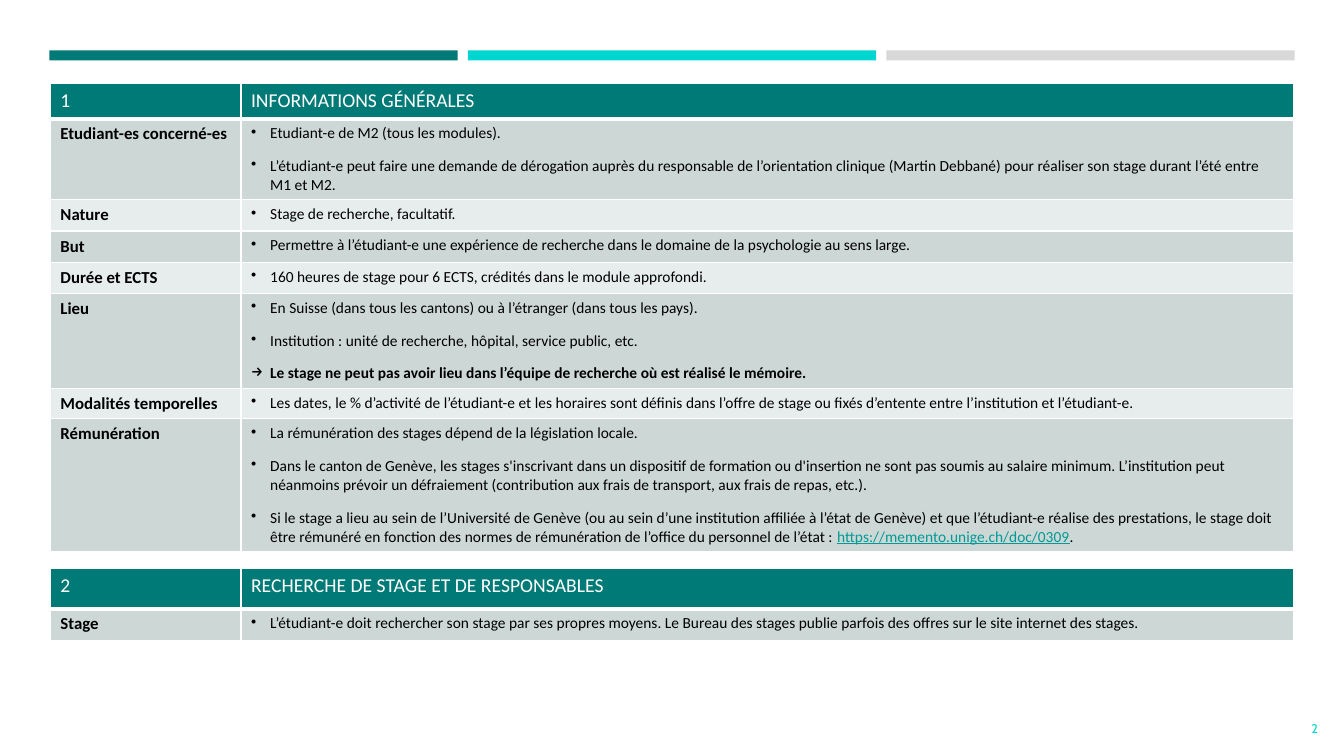
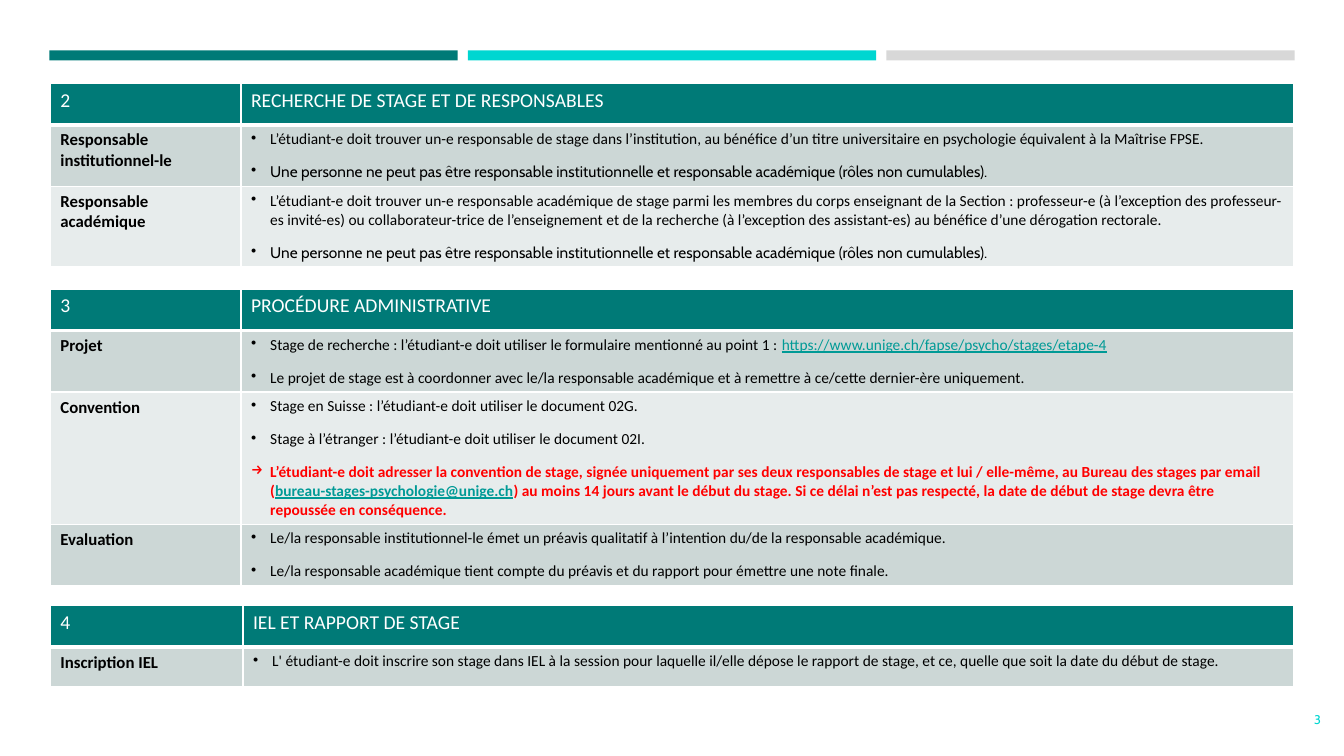
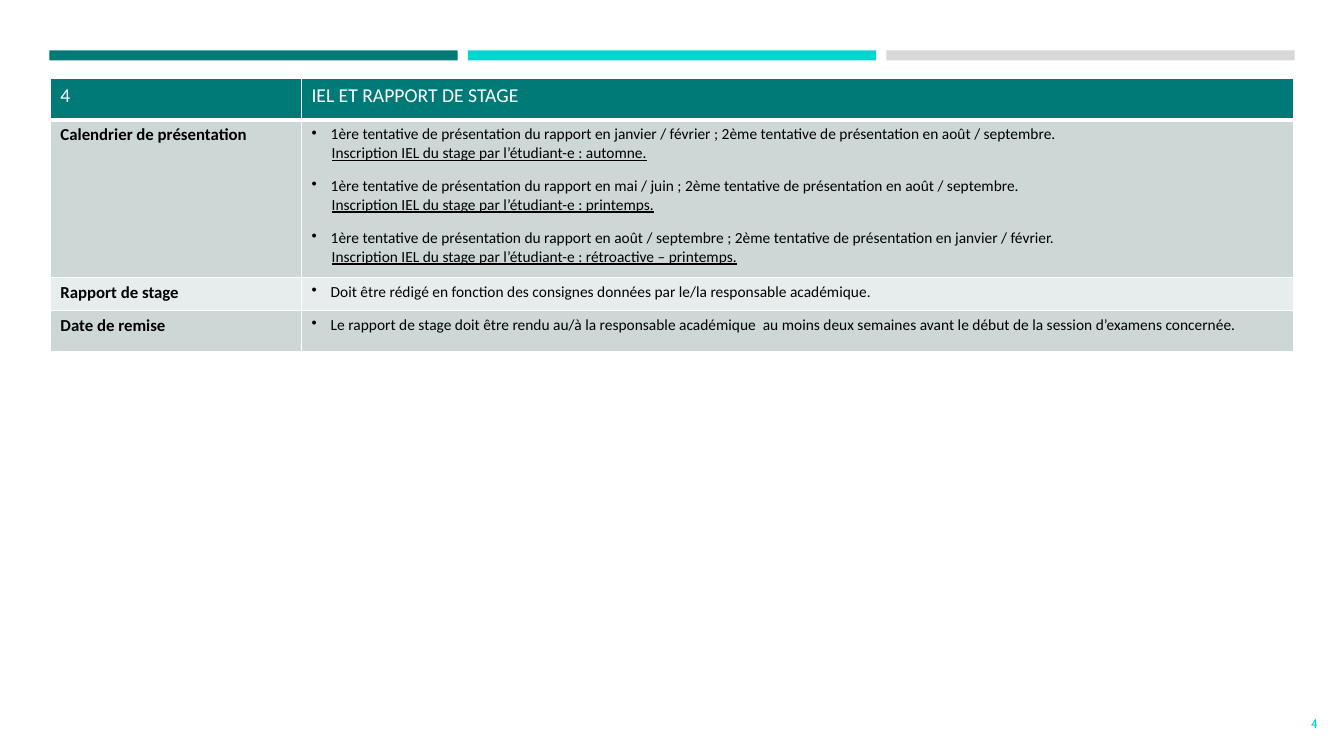
from lxml.etree import SubElement
from pptx import Presentation
from pptx.dml.color import RGBColor
from pptx.enum.shapes import MSO_SHAPE
from pptx.enum.text import MSO_ANCHOR, PP_ALIGN
from pptx.oxml.ns import qn
from pptx.util import Pt

PX = 9144  # one px is a hundredth of an inch
TEAL, CYAN, GREY = "007A77", "00D6D1", "D8D8D8"
WHITE, BLACK, RED, LINK = "FFFFFF", "000000", "FF0000", "009A96"
BANDS = ["CCD7D6", "E7ECEC"]
TABLE_LEFT, TABLE_WIDTH, INDENT = 50, 1233, 19

# First character of a line: (bullet, font, colour, bold)
MARKS = {
    "•": ("•", "Calibri", BLACK, False),
    "◦": ("•", "Cabin", BLACK, False),
    "→": ("→", "Calibri", BLACK, True),
    "!": ("→", "Calibri", RED, True),
    "_": (None, "Calibri", BLACK, False),
}


def color(value):
    return RGBColor.from_string(value)


def style_cell(cell, fill, bottom_width):
    cell.fill.solid()
    cell.fill.fore_color.rgb = color(fill)
    properties = cell._tc.get_or_add_tcPr()
    for index, side in enumerate(("lnL", "lnR", "lnT", "lnB")):
        width = bottom_width if side == "lnB" else 1
        line = properties.makeelement(qn("a:" + side), {"w": str(Pt(width))})
        solid = SubElement(line, qn("a:solidFill"))
        SubElement(solid, qn("a:srgbClr"), val=WHITE)
        properties.insert(index, line)


# Each table: top, label column width, header height, number, title,
# rows of (height, label, lines); text between bars is a link
not_both = ("◦ Une personne ne peut pas être responsable institutionnelle et "
            "responsable académique (rôles non cumulables).")
search_title = "RECHERCHE DE STAGE ET DE RESPONSABLES"
report_title = "IEL ET RAPPORT DE STAGE"

general = (83, 189, 35, "1", "INFORMATIONS GÉNÉRALES", [
    (80, "Etudiant-es concerné-es", [
        "• Etudiant-e de M2 (tous les modules).",
        "• L’étudiant-e peut faire une demande de dérogation auprès du responsable de "
        "l’orientation clinique (Martin Debbané) pour réaliser son stage durant l’été "
        "entre M1 et M2."]),
    (31, "Nature", ["• Stage de recherche, facultatif."]),
    (31, "But", [
        "• Permettre à l’étudiant-e une expérience de recherche dans le domaine de la "
        "psychologie au sens large."]),
    (31, "Durée et ECTS", [
        "• 160 heures de stage pour 6 ECTS, crédités dans le module approfondi."]),
    (94, "Lieu", [
        "• En Suisse (dans tous les cantons) ou à l’étranger (dans tous les pays).",
        "• Institution : unité de recherche, hôpital, service public, etc.",
        "→ Le stage ne peut pas avoir lieu dans l’équipe de recherche où est réalisé "
        "le mémoire."]),
    (30, "Modalités temporelles", [
        "• Les dates, le % d’activité de l’étudiant-e et les horaires sont définis dans "
        "l’offre de stage ou fixés d’entente entre l’institution et l’étudiant-e."]),
    (131, "Rémunération", [
        "• La rémunération des stages dépend de la législation locale.",
        "• Dans le canton de Genève, les stages s'inscrivant dans un dispositif de "
        "formation ou d'insertion ne sont pas soumis au salaire minimum. L’institution "
        "peut néanmoins prévoir un défraiement (contribution aux frais de transport, "
        "aux frais de repas, etc.).",
        "• Si le stage a lieu au sein de l’Université de Genève (ou au sein d’une "
        "institution affiliée à l’état de Genève) et que l’étudiant-e réalise des "
        "prestations, le stage doit être rémunéré en fonction des normes de rémunération "
        "de l’office du personnel de l’état : |https://memento.unige.ch/doc/0309|."]),
])
search = (564, 189, 40, "2", search_title, [
    (32, "Stage", [
        "• L’étudiant-e doit rechercher son stage par ses propres moyens. Le Bureau des "
        "stages publie parfois des offres sur le site internet des stages."]),
])
supervisors = (83, 189, 41, "2", search_title, [
    (61, "Responsable institutionnel-le", [
        "• L’étudiant-e doit trouver un-e responsable de stage dans l’institution, au "
        "bénéfice d’un titre universitaire en psychologie équivalent à la Maîtrise FPSE.",
        not_both]),
    (80, "Responsable académique", [
        "• L’étudiant-e doit trouver un-e responsable académique de stage parmi les "
        "membres du corps enseignant de la Section : professeur-e (à l’exception des "
        "professeur-es invité-es) ou collaborateur-trice de l’enseignement et de la "
        "recherche (à l’exception des assistant-es) au bénéfice d’une dérogation "
        "rectorale.",
        not_both]),
])
procedure = (287, 189, 41, "3", "PROCÉDURE ADMINISTRATIVE", [
    (61, "Projet", [
        "• Stage de recherche : l’étudiant-e doit utiliser le formulaire mentionné au "
        "point 1 : |https://www.unige.ch/fapse/psycho/stages/etape-4|",
        "• Le projet de stage est à coordonner avec le/la responsable académique et à "
        "remettre à ce/cette dernier-ère uniquement."]),
    (131, "Convention", [
        "• Stage en Suisse : l’étudiant-e doit utiliser le document 02G.",
        "• Stage à l’étranger : l’étudiant-e doit utiliser le document 02I.",
        "! L’étudiant-e doit adresser la convention de stage, signée uniquement par ses "
        "deux responsables de stage et lui / elle-même, au Bureau des stages par email "
        "(|bureau-stages-psychologie@unige.ch|) au moins 14 jours avant le début du "
        "stage. Si ce délai n’est pas respecté, la date de début de stage devra être "
        "repoussée en conséquence."]),
    (61, "Evaluation", [
        "• Le/la responsable institutionnel-le émet un préavis qualitatif à l’intention "
        "du/de la responsable académique.",
        "• Le/la responsable académique tient compte du préavis et du rapport pour "
        "émettre une note finale."]),
])
registration = (601, 191, 41, "4", report_title, [
    (39, "Inscription IEL", [
        "• L' étudiant-e doit inscrire son stage dans IEL à la session pour laquelle "
        "il/elle dépose le rapport de stage, et ce, quelle que soit la date du début de "
        "stage."]),
])
calendar = (78, 249, 41, "4", report_title, [
    (156, "Calendrier de présentation", [
        "• 1ère tentative de présentation du rapport en janvier / février ; 2ème "
        "tentative de présentation en août / septembre.",
        "_ Inscription IEL du stage par l’étudiant-e : automne.",
        "• 1ère tentative de présentation du rapport en mai / juin ; 2ème tentative de "
        "présentation en août / septembre.",
        "_ Inscription IEL du stage par l’étudiant-e : printemps.",
        "• 1ère tentative de présentation du rapport en août / septembre ; 2ème "
        "tentative de présentation en janvier / février.",
        "_ Inscription IEL du stage par l’étudiant-e : rétroactive – printemps."]),
    (33, "Rapport de stage", [
        "• Doit être rédigé en fonction des consignes données par le/la responsable "
        "académique."]),
    (41, "Date de remise", [
        "• Le rapport de stage doit être rendu au/à la responsable académique  au moins "
        "deux semaines avant le début de la session d’examens concernée."]),
])

# Each page: number, left and top of the number, tables
pages = [
    (2, 1202, 703, [general, search]),
    (3, 1205, 694, [supervisors, procedure, registration]),
    (4, 1202, 698, [calendar]),
]

deck = Presentation()
deck.slide_width, deck.slide_height = 1333 * PX, 750 * PX
layout = deck.slide_layouts[6]

for number, number_left, number_top, tables in pages:
    page = deck.slides.add_slide(layout)

    # Bands, drawn once and kept on the shared layout
    if number == pages[0][0]:
        for index, fill in enumerate((TEAL, CYAN, GREY)):
            band = page.shapes.add_shape(MSO_SHAPE.RECTANGLE, (49 + 415 * index) * PX,
                                         50 * PX, 405 * PX, 10 * PX)
            band.shadow.inherit = False
            band.fill.solid()
            band.fill.fore_color.rgb = color(fill)
            band.line.fill.background()
            layout.shapes._spTree.append(band._element)

    for top, label_width, header_height, section, title, rows in tables:
        # Grid
        heights = [header_height] + [row[0] for row in rows]
        frame = page.shapes.add_table(len(heights), 2, TABLE_LEFT * PX, top * PX,
                                      TABLE_WIDTH * PX, sum(heights) * PX)
        table = frame.table
        table.columns[0].width = label_width * PX
        table.columns[1].width = (TABLE_WIDTH - label_width) * PX
        for index, height in enumerate(heights):
            table.rows[index].height = height * PX
            for cell in table.rows[index].cells:
                if index == 0:
                    style_cell(cell, TEAL, 3)
                else:
                    style_cell(cell, BANDS[(index - 1) % 2], 1)

        # Header and label column
        labels = [(0, 0, section), (0, 1, title)]
        labels += [(index, 0, row[1]) for index, row in enumerate(rows, 1)]
        for row_index, column, text in labels:
            para = table.cell(row_index, column).text_frame.paragraphs[0]
            para.text = text
            para.font.name = "Calibri"
            para.font.size = Pt(12 if row_index else 14)
            para.font.bold = row_index > 0
            para.font.color.rgb = color(BLACK if row_index else WHITE)

        # Bulleted lines
        for row_index, (height, label, lines) in enumerate(rows, 1):
            text_frame = table.cell(row_index, 1).text_frame
            for line_index, line in enumerate(lines):
                bullet, font, ink, bold = MARKS[line[0]]
                para = text_frame.add_paragraph() if line_index else text_frame.paragraphs[0]
                para.font.name = font
                para.font.size = Pt(11)
                para.font.bold = bold
                properties = para._p.get_or_add_pPr()
                if bullet:
                    if line_index:
                        para.space_before = Pt(9.8)
                    properties.set("marL", str(INDENT * PX))
                    properties.set("indent", str(-INDENT * PX))
                    mark = properties.makeelement(qn("a:buChar"), {"char": bullet})
                    properties.insert_element_before(mark, "a:tabLst", "a:defRPr")
                else:
                    properties.set("indent", str(20 * PX))
                    para.font.underline = True
                for span_index, text in enumerate(line[2:].split("|")):
                    if text:
                        span = para.add_run()
                        span.text = text
                        is_link = span_index % 2 == 1
                        span.font.color.rgb = color(LINK if is_link else ink)
                        if is_link:
                            span.font.underline = True

    # Page number
    box = page.shapes.add_textbox(number_left * PX, number_top * PX, 115 * PX, 40 * PX)
    box.text_frame.word_wrap = True
    box.text_frame.vertical_anchor = MSO_ANCHOR.MIDDLE
    para = box.text_frame.paragraphs[0]
    para.text = str(number)
    para.alignment = PP_ALIGN.RIGHT
    para.font.name = "Cabin"
    para.font.size = Pt(9)
    para.font.color.rgb = color(CYAN)

deck.save("out.pptx")
